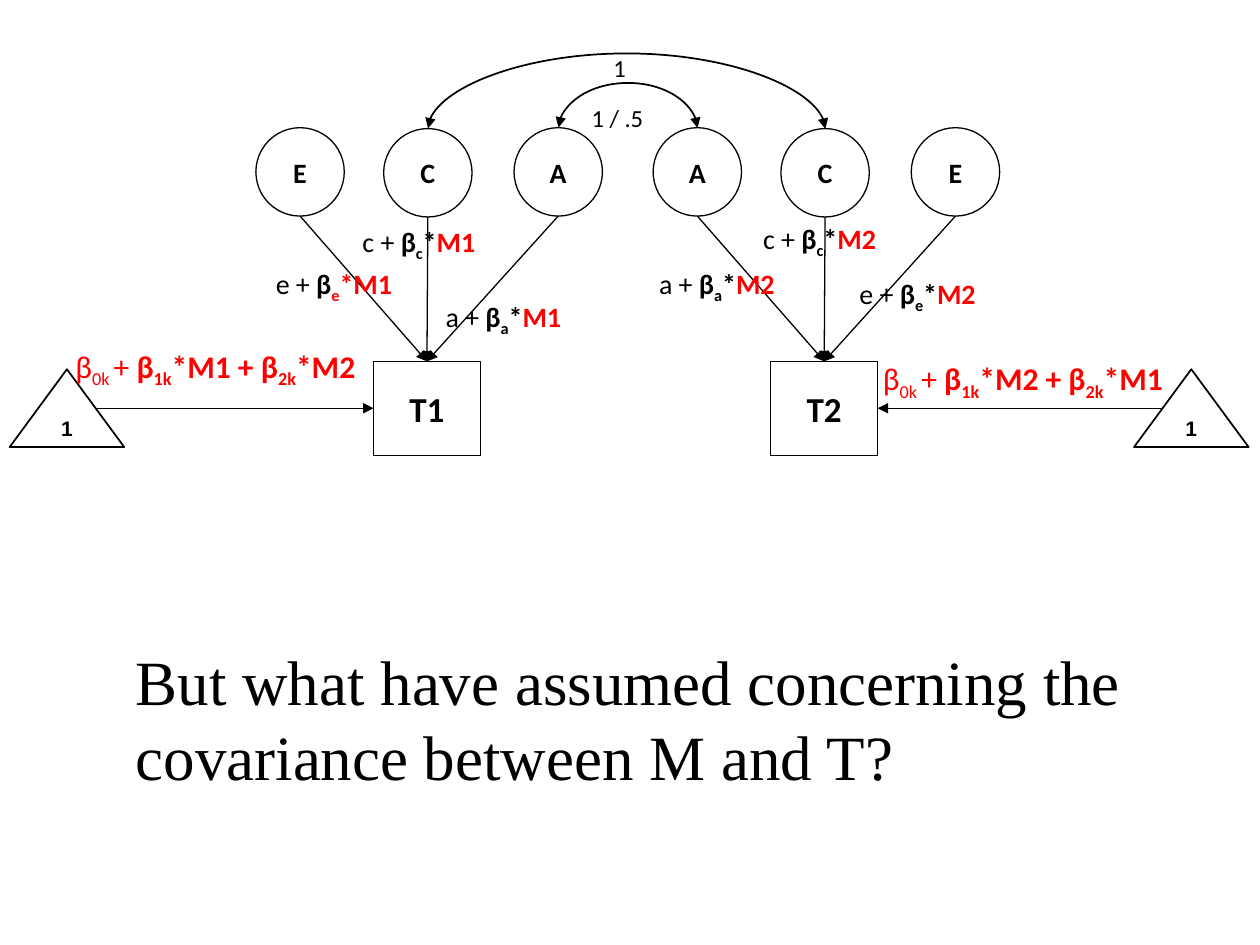
from lxml.etree import SubElement
from pptx import Presentation
from pptx.dml.color import RGBColor
from pptx.enum.shapes import MSO_CONNECTOR, MSO_SHAPE
from pptx.enum.text import MSO_ANCHOR, MSO_AUTO_SIZE, PP_ALIGN
from pptx.oxml.ns import qn
from pptx.util import Pt

BLACK, WHITE, RED = "000000", "FFFFFF", "FF0000"


def rgb(color):
    return RGBColor.from_string(color)


class Diagram:
    font = "Calibri"
    thin, thick = 0.75, 1

    def __init__(self, slide):
        self.s = slide

    def style(self, p, size, color=BLACK, bold=False, font=None):
        p.font.name = font or self.font
        p.font.size = Pt(size)
        p.font.bold = bold
        p.font.color.rgb = rgb(color)

    def node(self, kind, x, y, w, h, text, size, weight=thin, fill=WHITE, font=None, wrap=False):
        sp = self.s.shapes.add_shape(kind, Pt(x), Pt(y), Pt(w), Pt(h))
        sp.shadow.inherit = False
        if fill:
            sp.fill.solid()
            sp.fill.fore_color.rgb = rgb(fill)
        else:
            sp.fill.background()
        sp.line.color.rgb = rgb(BLACK)
        sp.line.width = Pt(weight)
        tf = sp.text_frame
        tf.word_wrap = wrap
        tf.vertical_anchor = MSO_ANCHOR.MIDDLE
        p = tf.paragraphs[0]
        p.text = text
        p.alignment = PP_ALIGN.CENTER
        self.style(p, size, bold=True, font=font)

    def text(self, x, y, w, h, runs, size, color=BLACK, font=None, wrap=False):
        tf = self.s.shapes.add_textbox(Pt(x), Pt(y), Pt(w), Pt(h)).text_frame
        tf.word_wrap = wrap
        tf.auto_size = MSO_AUTO_SIZE.SHAPE_TO_FIT_TEXT
        p = tf.paragraphs[0]
        self.style(p, size, color, font=font)
        for words, flags in runs:
            r = p.add_run()
            r.text = words
            if "bold" in flags:
                r.font.bold = True
            if "red" in flags:
                r.font.color.rgb = rgb(RED)
            if "sub" in flags:
                r.font._element.set("baseline", "-25000")

    def connector(self, kind, x1, y1, x2, y2, weight, ends):
        c = self.s.shapes.add_connector(kind, Pt(x1), Pt(y1), Pt(x2), Pt(y2))
        c.line.color.rgb = rgb(BLACK)
        c.line.width = Pt(weight)
        ln = c.line._get_or_add_ln()
        for end in ends:
            SubElement(ln, qn(f"a:{end}"), type="triangle")
        SubElement(c._element.spPr, qn("a:effectLst"))
        return c

    def arrow(self, x1, y1, x2, y2):
        self.connector(MSO_CONNECTOR.STRAIGHT, x1, y1, x2, y2, self.thin, ["tailEnd"])

    def arc(self, x1, x2, y, rise):
        depth = 0.25
        mid, half = (x1 + x2) / 2, (x2 - x1) / 2
        c = self.connector(MSO_CONNECTOR.CURVE, mid, y - half, mid + depth, y + half,
                           self.thick, ["headEnd", "tailEnd"])
        xfrm = c._element.spPr.get_or_add_xfrm()
        xfrm.set("rot", "5400000")
        xfrm.set("flipV", "1")
        guides = c._element.spPr.find(qn("a:prstGeom")).get_or_add_avLst()
        SubElement(guides, qn("a:gd"), name="adj1", fmla=f"val {round(-rise / depth * 100000)}")

    def path_label(self, letter, moderator, x, y, red_sub=False):
        tint = "red" if red_sub else ""
        self.text(x, y, 82, 26.6, [(f"{letter} + ", ""), ("β", "bold"),
                                   (letter, f"bold sub {tint}"), ("*", f"bold {tint}"),
                                   (moderator, "bold red")], 16)

    def mean_label(self, own, other, x, y):
        self.text(x, y, 183, 29, [("β", ""), ("0k ", "sub"), ("+ ", ""), ("β", "bold"),
                                  ("1k", "bold sub"), (f"*{own} + β", "bold"),
                                  ("2k", "bold sub"), (f"*{other}", "bold")], 18, RED)


def main():
    prs = Presentation()
    prs.slide_width, prs.slide_height = Pt(720), Pt(540)
    d = Diagram(prs.slides.add_slide(prs.slide_layouts[6]))

    d.text(70.5, 363.5, 594, 94,
           [("But what have assumed concerning the covariance between M and T?", "")],
           36, font="Times New Roman", wrap=True)

    size, top, trait_top, trait_w = 50.5, 73, 206.5, 61
    factor_x = (171.5, 244.5, 319)
    trait_x, twin_gap = 244, 227
    for twin, factors in enumerate(("ECA", "ACE")):
        dx = twin * twin_gap
        for factor, x in zip(factors, factor_x):
            y = top + (0.5 if factor == "C" else 0)
            d.node(MSO_SHAPE.OVAL, x + dx - size / 2, y, size, size, factor, 16)
            d.arrow(x + dx, y + size, trait_x + dx, trait_top)
        d.node(MSO_SHAPE.RECTANGLE, trait_x + dx - trait_w / 2, trait_top, trait_w, 54,
               f"T{twin + 1}", 20)

    d.path_label("e", "M1", 150.5, 148.5, red_sub=True)
    d.path_label("a", "M1", 247.5, 167.5)
    d.path_label("c", "M1", 200, 125)
    d.path_label("a", "M2", 369.5, 149)
    d.path_label("e", "M2", 484, 154.5)
    d.path_label("c", "M2", 429, 123)

    d.arc(factor_x[2], factor_x[0] + twin_gap, top, 25)
    d.arc(factor_x[1], factor_x[1] + twin_gap, top + 0.5, 42)
    d.text(331, 55.5, 44, 24, [("1 / .5", "")], 14)
    d.text(343.5, 26.5, 24.5, 24, [("1", "")], 14)

    for x in (5.5, 648):
        d.node(MSO_SHAPE.ISOSCELES_TRIANGLE, x, 211, 65.5, 44.5, "1", 12,
               weight=d.thick, fill=None, font="Arial", wrap=True)
    d.arrow(55, 233.3, trait_x - trait_w / 2, 233.3)
    d.arrow(664.5, 233.3, trait_x + twin_gap + trait_w / 2, 233.3)
    d.mean_label("M1", "M2", 36, 194.5)
    d.mean_label("M2", "M1", 497.5, 201.5)

    prs.save("out.pptx")


if __name__ == "__main__":
    main()
